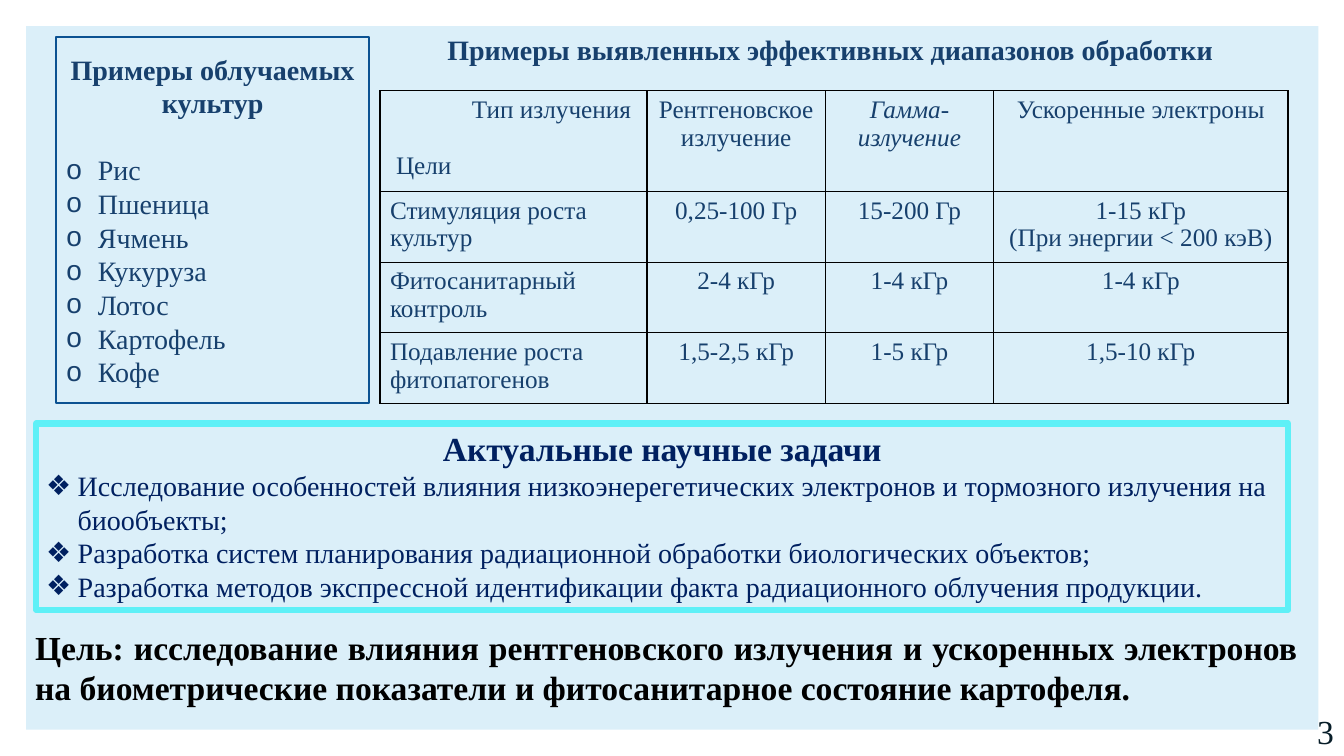
from lxml import etree
from pptx import Presentation
from pptx.dml.color import RGBColor
from pptx.enum import shapes, text
from pptx.oxml import ns
from pptx.util import Pt

AL = text.PP_ALIGN
NAVY, BLUE = "002060", "17406D"


def color(value):
    return RGBColor.from_string(value)


def write(p, words, size, col, bold=False, align=AL.LEFT, bullet=None):
    p.text = words
    p.alignment = align
    if bullet:
        pPr = p._p.get_or_add_pPr()
        pPr.set("marL", str(Pt(22.5)))
        pPr.set("indent", str(-Pt(22.5)))
        etree.SubElement(pPr, ns.qn("a:buFont")).set("typeface", "Arial")
        etree.SubElement(pPr, ns.qn("a:buChar")).set("char", bullet)
    for r in p.runs:
        f = r.font
        f.name, f.size, f.bold = "Times New Roman", Pt(size), bold
        f.color.rgb = color(col)


prs = Presentation()
prs.slide_width, prs.slide_height = Pt(960), Pt(540)
s = prs.slides.add_slide(prs.slide_layouts[6])

panels = []
for x, y, w, h, fill, line, width in [
    (18.7, 18.7, 923, 502.5, "DBEFF9", None, 0),
    (25.9, 302.4, 894.2, 133.2, None, "5EF0F7", 4.5),
    (40.3, 26.6, 223.2, 261.4, None, "0B5292", 1.5),
]:
    sp = s.shapes.add_shape(shapes.MSO_SHAPE.RECTANGLE, Pt(x), Pt(y), Pt(w), Pt(h))
    sp.shadow.inherit = False
    if fill:
        sp.fill.solid()
        sp.fill.fore_color.rgb = color(fill)
    else:
        sp.fill.background()
    if line:
        sp.line.color.rgb = color(line)
        sp.line.width = Pt(width)
    else:
        sp.line.fill.background()
    panels.append(sp)

tasks = [
    "Исследование особенностей влияния низкоэнерегетических электронов и тормозного излучения на биообъекты;",
    "Разработка систем планирования радиационной обработки биологических объектов;",
    "Разработка методов экспрессной идентификации факта радиационного облучения продукции.",
]
crops = ["Рис", "Пшеница", "Ячмень", "Кукуруза", "Лотос", "Картофель", "Кофе"]
for sp, title, size, col, anchor, gap, bullet, items in [
    (panels[1], "Актуальные научные задачи", 24, NAVY, text.MSO_ANCHOR.TOP, 0, "❖", tasks),
    (panels[2], "Примеры облучаемых культур", 20, BLUE, text.MSO_ANCHOR.MIDDLE, 24, "o", crops),
]:
    tf = sp.text_frame
    tf.word_wrap = True
    tf.vertical_anchor = anchor
    write(tf.paragraphs[0], title, size, col, True, AL.CENTER)
    tf.paragraphs[0].space_after = Pt(gap)
    for item in items:
        write(tf.add_paragraph(), item, 20, col, bullet=bullet)

for x, y, w, h, words, size, col, bold, align, wrap in [
    (933.8, 504, 35.3, 36, "3", 24, "071D28", False, AL.LEFT, True),
    (312.5, 19.4, 565.9, 31.7, "Примеры выявленных эффективных диапазонов обработки",
     20, BLUE, True, AL.LEFT, False),
    (18, 444.2, 915.8, 65.5, "Цель: исследование влияния рентгеновского излучения и ускоренных "
     "электронов на биометрические показатели и фитосанитарное состояние картофеля.",
     24, "000000", True, AL.JUSTIFY, True),
]:
    tf = s.shapes.add_textbox(Pt(x), Pt(y), Pt(w), Pt(h)).text_frame
    tf.word_wrap = wrap
    write(tf.paragraphs[0], words, size, col, bold, align)

rows = [
    ["Тип излучения\nЦели", "Рентгеновское излучение", "Гамма-излучение", "Ускоренные электроны"],
    ["Стимуляция роста культур", "0,25-100 Гр", "15-200 Гр", "1-15 кГр\n(При энергии < 200 кэВ)"],
    ["Фитосанитарный контроль", "2-4 кГр", "1-4 кГр", "1-4 кГр"],
    ["Подавление роста фитопатогенов", "1,5-2,5 кГр", "1-5 кГр", "1,5-10 кГр"],
]
widths, heights = [190.8, 127.4, 120.2, 210.2], [72, 50.4, 50.4, 50.4]
table = s.shapes.add_table(4, 4, Pt(271.4), Pt(64.8), Pt(sum(widths)), Pt(sum(heights))).table
table.first_row = table.horz_banding = False
for column, w in zip(table.columns, widths):
    column.width = Pt(w)
for row, h in zip(table.rows, heights):
    row.height = Pt(h)
for i, row in enumerate(rows):
    for j, words in enumerate(row):
        cell = table.cell(i, j)
        tcPr = cell._tc.get_or_add_tcPr()
        for side in ("lnL", "lnR", "lnT", "lnB"):
            ln = etree.SubElement(tcPr, ns.qn("a:" + side), w=str(Pt(1)))
            fill = etree.SubElement(ln, ns.qn("a:solidFill"))
            etree.SubElement(fill, ns.qn("a:srgbClr"), val="000000")
        cell.fill.background()
        tf = cell.text_frame
        for k, line in enumerate(words.split("\n")):
            p = tf.add_paragraph() if k else tf.paragraphs[0]
            write(p, line, 18, BLUE, align=AL.CENTER if j else AL.LEFT)

corner = table.cell(0, 0)
corner.margin_left = corner.margin_right = Pt(11.5)
kind, goals = corner.text_frame.paragraphs
kind.alignment = AL.RIGHT
goals.space_before = Pt(20)
table.cell(0, 2).text_frame.paragraphs[0].runs[0].font.italic = True

prs.save("out.pptx")
